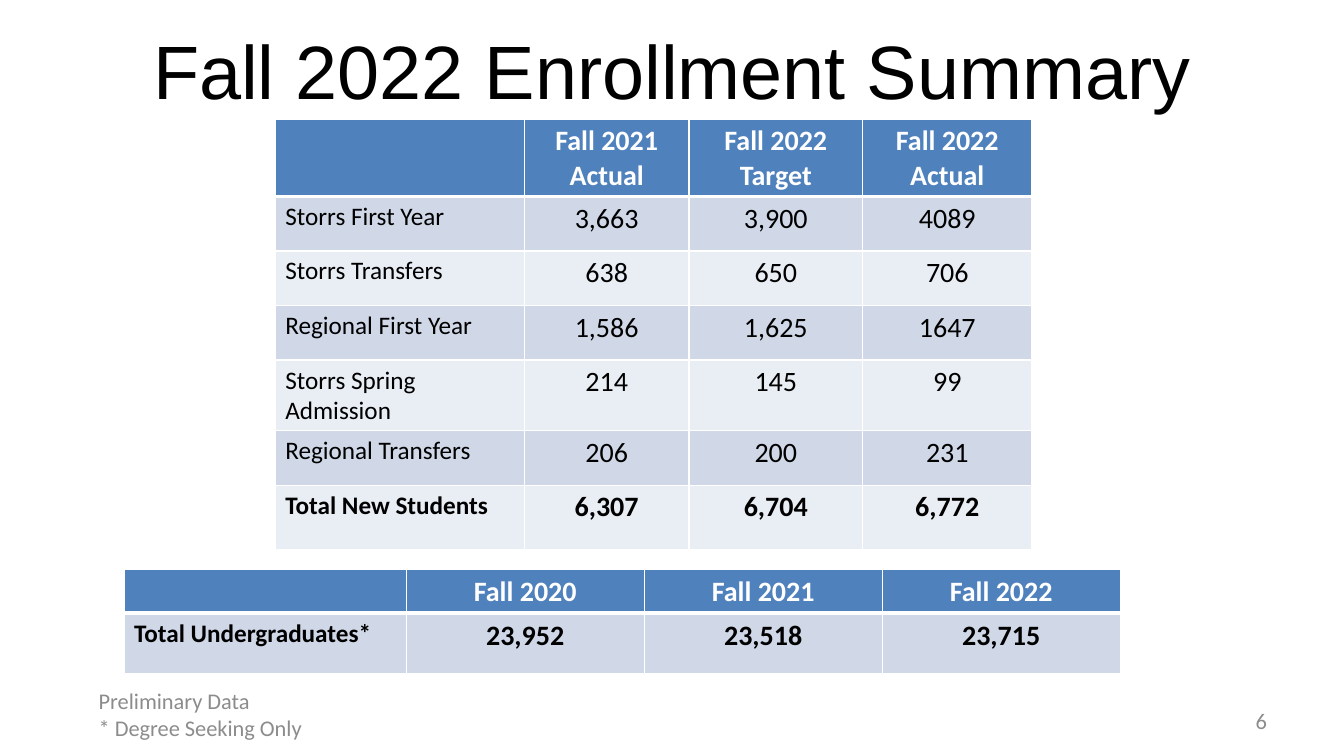
from lxml.etree import SubElement
from pptx import Presentation
from pptx.dml.color import RGBColor
from pptx.enum.text import MSO_ANCHOR, PP_ALIGN
from pptx.oxml.ns import qn
from pptx.util import Pt

BLACK = RGBColor(0x00, 0x00, 0x00)
WHITE = RGBColor(0xFF, 0xFF, 0xFF)
GRAY = RGBColor(0x8C, 0x8C, 0x8C)
BLUE = RGBColor(0x4F, 0x81, 0xBD)
BANDS = [RGBColor(0xD0, 0xD8, 0xE8), RGBColor(0xE9, 0xED, 0xF4)]

NEW_STUDENTS = [
    ["", "Fall 2021 Actual", "Fall 2022 Target", "Fall 2022 Actual"],
    ["Storrs First Year", "3,663", "3,900", "4089"],
    ["Storrs Transfers", "638", "650", "706"],
    ["Regional First Year", "1,586", "1,625", "1647"],
    ["Storrs Spring Admission", "214", "145", "99"],
    ["Regional Transfers", "206", "200", "231"],
    ["Total New Students", "6,307", "6,704", "6,772"],
]
UNDERGRADUATES = [
    ["", "Fall 2020", "Fall 2021", "Fall 2022"],
    ["Total Undergraduates*", "23,952", "23,518", "23,715"],
]


def write(p, text, size=16, color=GRAY, bold=False, font="Calibri", align=PP_ALIGN.LEFT):
    p.alignment = align
    r = p.add_run()
    r.text = text
    r.font.name = font
    r.font.size = Pt(size)
    r.font.bold = bold
    r.font.color.rgb = color


def set_borders(cell, top, bottom):
    tcPr = cell._tc.get_or_add_tcPr()
    for side, width in (("L", 1), ("R", 1), ("T", top), ("B", bottom)):
        ln = SubElement(tcPr, qn(f"a:ln{side}"), w=str(Pt(width)))
        fill = SubElement(ln, qn("a:solidFill"))
        SubElement(fill, qn("a:srgbClr"), val=str(WHITE))


def add_title(s, text, left, top, width, height):
    title = s.shapes.title
    title.left, title.top, title.width, title.height = map(Pt, (left, top, width, height))
    tf = title.text_frame
    tf.vertical_anchor = MSO_ANCHOR.MIDDLE
    write(tf.paragraphs[0], text, size=54, color=BLACK, font="Arial", align=PP_ALIGN.CENTER)


def add_note(s, lines, left, top, width, height, align=PP_ALIGN.LEFT):
    tf = s.shapes.add_textbox(Pt(left), Pt(top), Pt(width), Pt(height)).text_frame
    tf.word_wrap = True
    tf.margin_top = tf.margin_bottom = 0
    tf.vertical_anchor = MSO_ANCHOR.MIDDLE
    for i, line in enumerate(lines):
        p = tf.add_paragraph() if i else tf.paragraphs[0]
        write(p, line, align=align)


def add_summary_table(s, data, left, top, col_widths, row_heights):
    table = s.shapes.add_table(len(data), len(data[0]), Pt(left), Pt(top),
                               Pt(sum(col_widths)), Pt(sum(row_heights))).table
    for column, width in zip(table.columns, col_widths):
        column.width = Pt(width)
    for i, (values, height) in enumerate(zip(data, row_heights)):
        table.rows[i].height = Pt(height)
        header = i == 0
        for j, value in enumerate(values):
            cell = table.cell(i, j)
            set_borders(cell, top=3 if i == 1 else 1, bottom=3 if header else 1)
            cell.fill.solid()
            cell.fill.fore_color.rgb = BLUE if header else BANDS[(i - 1) % 2]
            if value:
                write(cell.text_frame.paragraphs[0], value,
                      size=20 if j else 18,
                      color=WHITE if header else BLACK,
                      bold=header or values[0].startswith("Total"),
                      align=PP_ALIGN.CENTER if j else PP_ALIGN.LEFT)


def enrollment_slide(prs):
    s = prs.slides.add_slide(prs.slide_layouts[5])
    add_title(s, "Fall 2022 Enrollment Summary", 48, 6.5, 864, 86.4)
    add_note(s, ["6"], 688, 500.4, 224, 28.8, align=PP_ALIGN.RIGHT)
    add_summary_table(s, NEW_STUDENTS, 196.6, 85, [178, 117.6, 124, 121],
                      [52.6, 39, 39, 39, 48, 39, 46])
    add_note(s, ["Preliminary Data", "* Degree Seeking Only"], 63.4, 490.5, 216, 39)
    add_summary_table(s, UNDERGRADUATES, 88.6, 406.8, [201.6, 170, 170, 170], [29, 43])


def main():
    prs = Presentation()
    prs.slide_width, prs.slide_height = Pt(960), Pt(540)
    enrollment_slide(prs)
    prs.save("out.pptx")


if __name__ == "__main__":
    main()
